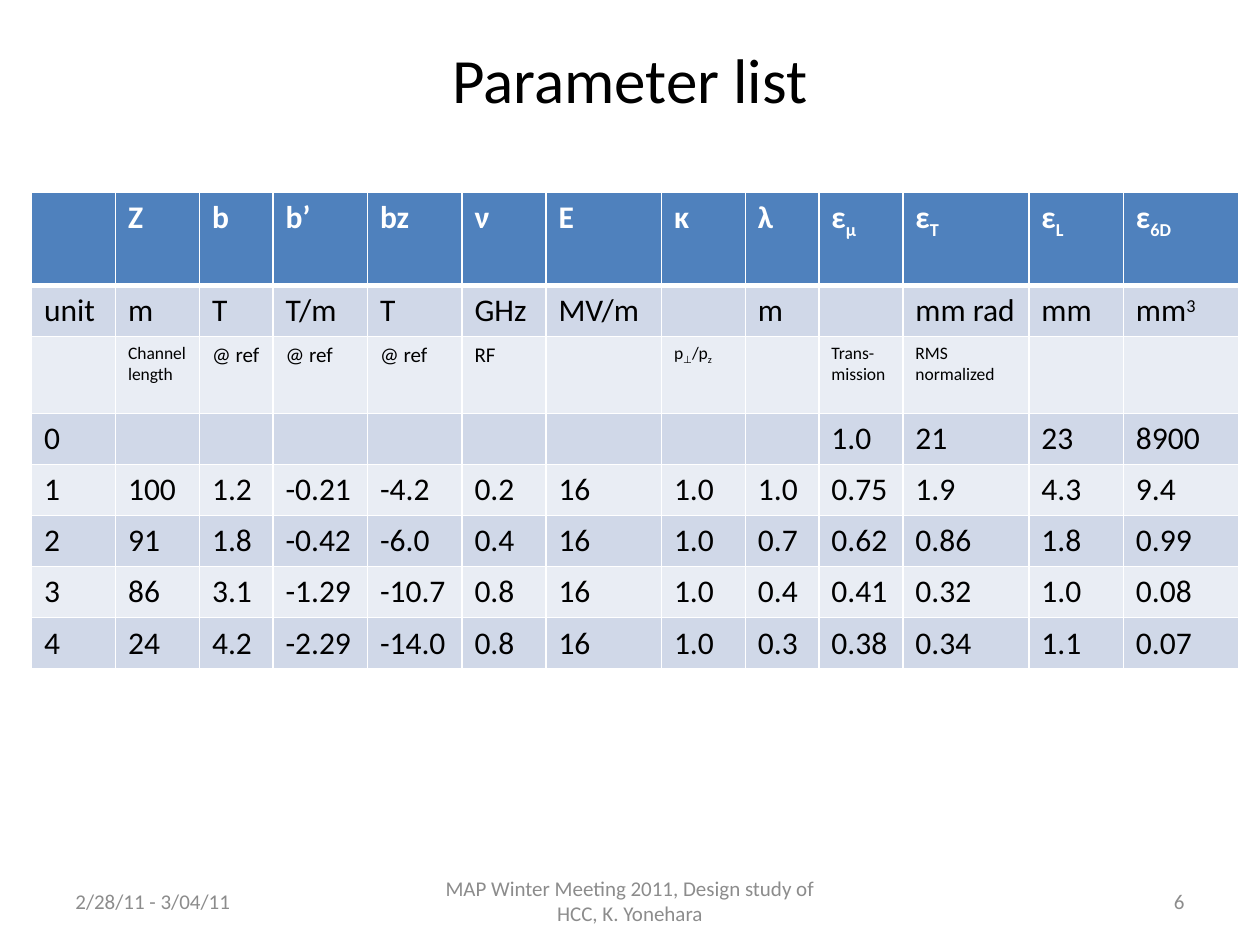
from lxml.etree import SubElement
from pptx import Presentation
from pptx.dml.color import RGBColor
from pptx.enum.text import MSO_ANCHOR, PP_ALIGN
from pptx.oxml.ns import qn
from pptx.util import Pt

COLORS = {
    "header": "4F81BD",
    "dark_band": "D0D8E8",
    "light_band": "E9EDF4",
    "white": "FFFFFF",
    "black": "000000",
    "footer": "8C8C8C",
}
FONT = "Calibri"
BASELINES = {"_": "-25000", "^": "30000"}

COLUMN_WIDTHS = [48, 48, 42, 54, 54, 48, 66, 48, 42, 48, 72, 54, 66]
ROW_HEIGHTS = [53, 29.2, 44] + [29.2] * 5
NOTE_ROW = 2
NOTE_SIZES = {"@ ref": 12, "RF": 12}

ROWS = [
    ["", "Z", "b", "b’", "bz", "ν", "E", "κ", "λ", "ε|_μ", "ε|_T", "ε|_L", "ε|_6D"],
    ["unit", "m", "T", "T/m", "T", "GHz", "MV/m", "", "m", "", "mm rad", "mm", "mm|^3"],
    ["", "Channel length", "@ ref", "@ ref", "@ ref", "RF", "", "p|_⊥|/p|_z", "",
     "Trans-\nmission", "RMS normalized", "", ""],
    ["0", "", "", "", "", "", "", "", "", "1.0", "21", "23", "8900"],
    ["1", "100", "1.2", "-0.21", "-4.2", "0.2", "16", "1.0", "1.0", "0.75", "1.9", "4.3", "9.4"],
    ["2", "91", "1.8", "-0.42", "-6.0", "0.4", "16", "1.0", "0.7", "0.62", "0.86", "1.8", "0.99"],
    ["3", "86", "3.1", "-1.29", "-10.7", "0.8", "16", "1.0", "0.4", "0.41", "0.32", "1.0", "0.08"],
    ["4", "24", "4.2", "-2.29", "-14.0", "0.8", "16", "1.0", "0.3", "0.38", "0.34", "1.1", "0.07"],
]

FOOTERS = [
    ("2/28/11 - 3/04/11", 36, 168, PP_ALIGN.LEFT),
    ("MAP Winter Meeting 2011, Design study of HCC, K. Yonehara", 246, 228, PP_ALIGN.CENTER),
    ("6", 516, 168, PP_ALIGN.RIGHT),
]


def format_run(run, size, color, bold=False):
    run.font.name = FONT
    run.font.size = Pt(size)
    run.font.bold = bold
    run.font.color.rgb = RGBColor.from_string(COLORS[color])


def add_border(cell, side, width):
    line = SubElement(cell._tc.get_or_add_tcPr(), qn(f"a:ln{side}"), w=str(Pt(width)))
    fill = SubElement(line, qn("a:solidFill"))
    SubElement(fill, qn("a:srgbClr"), val=COLORS["white"])


presentation = Presentation()
presentation.slide_width = Pt(720)
presentation.slide_height = Pt(540)
slide = presentation.slides.add_slide(presentation.slide_layouts[5])

title = slide.shapes.title
title.left, title.top, title.width, title.height = Pt(36), Pt(0), Pt(648), Pt(90)
title.text_frame.text = "Parameter list"
title.text_frame.vertical_anchor = MSO_ANCHOR.MIDDLE
title.text_frame.paragraphs[0].alignment = PP_ALIGN.CENTER
format_run(title.text_frame.paragraphs[0].runs[0], 36, "black")

table = slide.shapes.add_table(
    len(ROWS), len(COLUMN_WIDTHS), Pt(18), Pt(110), Pt(sum(COLUMN_WIDTHS)), Pt(sum(ROW_HEIGHTS))
).table
for column, width in zip(table.columns, COLUMN_WIDTHS):
    column.width = Pt(width)
for row, height in zip(table.rows, ROW_HEIGHTS):
    row.height = Pt(height)

for row_index, values in enumerate(ROWS):
    is_header = row_index == 0
    band = "header" if is_header else "dark_band" if row_index % 2 else "light_band"
    text_color = "white" if is_header else "black"
    for column_index, value in enumerate(values):
        cell = table.cell(row_index, column_index)
        for side in "LRTB":
            thick = (is_header and side == "B") or (row_index == 1 and side == "T")
            add_border(cell, side, 3 if thick else 1)
        cell.fill.solid()
        cell.fill.fore_color.rgb = RGBColor.from_string(COLORS[band])
        if not value:
            continue
        size = NOTE_SIZES.get(value, 10) if row_index == NOTE_ROW else 18
        cell.text_frame.text = value if "|" not in value else ""
        for part in value.split("|") if "|" in value else []:
            run = cell.text_frame.paragraphs[0].add_run()
            run.text = part.lstrip("_^")
            if part[0] in BASELINES:
                run._r.get_or_add_rPr().set("baseline", BASELINES[part[0]])
        for paragraph in cell.text_frame.paragraphs:
            for run in paragraph.runs:
                format_run(run, size, text_color, is_header)

for text, left, width, alignment in FOOTERS:
    footer = slide.shapes.add_textbox(Pt(left), Pt(500.5), Pt(width), Pt(28.75))
    footer.text_frame.word_wrap = True
    footer.text_frame.vertical_anchor = MSO_ANCHOR.MIDDLE
    footer.text_frame.text = text
    footer.text_frame.paragraphs[0].alignment = alignment
    format_run(footer.text_frame.paragraphs[0].runs[0], 12, "footer")

presentation.save("out.pptx")
